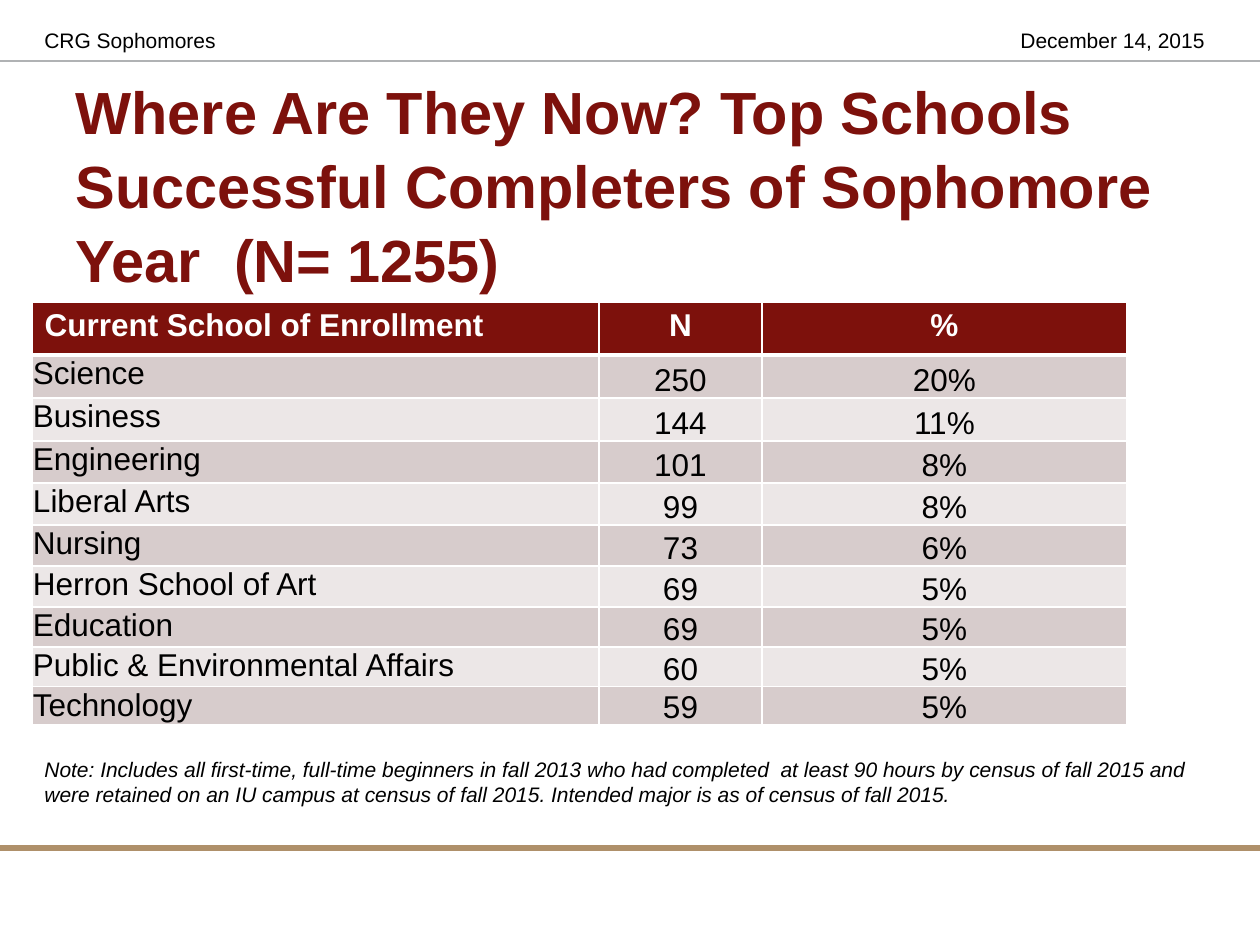
from lxml import etree
from pptx import Presentation
from pptx.dml.color import RGBColor
from pptx.enum.shapes import MSO_CONNECTOR
from pptx.enum.text import MSO_ANCHOR, MSO_AUTO_SIZE, PP_ALIGN
from pptx.oxml.ns import qn
from pptx.util import Emu, Pt

LEFT, CENTER = PP_ALIGN.LEFT, PP_ALIGN.CENTER
TOP, MIDDLE, BOTTOM = MSO_ANCHOR.TOP, MSO_ANCHOR.MIDDLE, MSO_ANCHOR.BOTTOM
STRAIGHT = MSO_CONNECTOR.STRAIGHT
NO_AUTOFIT = MSO_AUTO_SIZE.NONE

CRIMSON = RGBColor(0x7D, 0x11, 0x0C)
TAN = RGBColor(0xAF, 0x90, 0x6A)
GREY = RGBColor(0xB0, 0xB2, 0xB4)
WHITE = RGBColor(0xFF, 0xFF, 0xFF)
BLACK = RGBColor(0, 0, 0)
BANDS = [RGBColor(0xD7, 0xCC, 0xCC), RGBColor(0xEC, 0xE7, 0xE7)]

FONT = "Arial"
SLIDE_WIDTH, SLIDE_HEIGHT = 1260, 945

TITLE = "Where Are They Now? Top Schools Successful Completers of Sophomore Year  (N= 1255)"
TITLE_BOX = (63, 105, 1169, 157)

HEADINGS = ("Current School of Enrollment", "N", "%")
SCHOOLS = [
    ("Science", "250", "20%"),
    ("Business", "144", "11%"),
    ("Engineering", "101", "8%"),
    ("Liberal Arts", "99", "8%"),
    ("Nursing", "73", "6%"),
    ("Herron School of Art", "69", "5%"),
    ("Education", "69", "5%"),
    ("Public & Environmental Affairs", "60", "5%"),
    ("Technology", "59", "5%"),
]
TABLE_LEFT, TABLE_TOP = 32, 302
COLUMN_WIDTHS = [567, 163, 365]
ROW_HEIGHTS = [53, 43, 43, 42, 42, 41, 41, 40, 40, 38]

CAPTIONS = [
    ("December 14, 2015", (1008, 21, 221, 42), False),
    ("CRG Sophomores", (32, 21, 683, 42), False),
    ("Note: Includes all first-time, full-time beginners in fall 2013 who had completed  "
     "at least 90 hours by census of fall 2015 and were retained on an IU campus at census "
     "of fall 2015. Intended major is as of census of fall 2015.",
     (32, 750, 1176, 63), True),
]
RULES = [(61, GREY, 0.75), (848, TAN, 3.75)]


def px(length):
    return Emu(round(length * 914400 / 126))


def style(paragraph, size, color, bold=False, italic=False):
    font = paragraph.font
    font.name, font.size = FONT, Pt(size)
    font.bold, font.italic = bold, italic
    font.color.rgb = color


def add_rule(slide, y, color, weight):
    rule = slide.shapes.add_connector(STRAIGHT, 0, px(y), px(SLIDE_WIDTH), px(y))
    rule.line.color.rgb = color
    rule.line.width = Pt(weight)
    etree.SubElement(rule._element.spPr, qn("a:effectLst"))


def add_title(slide):
    title = slide.shapes.title
    title.left, title.top, title.width, title.height = map(px, TITLE_BOX)
    frame = title.text_frame
    frame.text = TITLE
    frame.auto_size = NO_AUTOFIT
    frame.vertical_anchor = MIDDLE
    heading = frame.paragraphs[0]
    heading.alignment = LEFT
    heading.line_spacing = 1.04
    style(heading, 34, CRIMSON, bold=True)


def add_caption(slide, text, box, italic):
    frame = slide.shapes.add_textbox(*map(px, box)).text_frame
    frame.word_wrap = True
    frame.text = text
    style(frame.paragraphs[0], 12, BLACK, italic=italic)


def set_borders(cell, weights):
    properties = cell._tc.get_or_add_tcPr()
    for side, weight in weights.items():
        border = etree.SubElement(properties, qn(f"a:ln{side}"), w=str(Pt(weight)))
        fill = etree.SubElement(border, qn("a:solidFill"))
        etree.SubElement(fill, qn("a:srgbClr"), val=str(WHITE))


def fill_cell(cell, text, row, column):
    is_heading = row == 0
    set_borders(cell, {"L": 1, "R": 1, "T": 3 if row == 1 else 1, "B": 3 if is_heading else 1})
    cell.fill.solid()
    cell.fill.fore_color.rgb = CRIMSON if is_heading else BANDS[(row - 1) % 2]
    if not is_heading:
        cell.margin_left = cell.margin_right = cell.margin_top = px(1)
        cell.margin_bottom = 0
    cell.vertical_anchor = TOP if is_heading or column == 0 else BOTTOM
    cell.text = text
    paragraph = cell.text_frame.paragraphs[0]
    paragraph.alignment = CENTER if column else LEFT
    style(paragraph, 18, WHITE if is_heading else BLACK, bold=is_heading)


def add_school_table(slide):
    rows = [HEADINGS] + SCHOOLS
    table = slide.shapes.add_table(
        len(rows), len(HEADINGS), px(TABLE_LEFT), px(TABLE_TOP),
        px(sum(COLUMN_WIDTHS)), px(sum(ROW_HEIGHTS))).table
    for column, width in zip(table.columns, COLUMN_WIDTHS):
        column.width = px(width)
    for row, height in zip(table.rows, ROW_HEIGHTS):
        row.height = px(height)
    for r, values in enumerate(rows):
        for c, value in enumerate(values):
            fill_cell(table.cell(r, c), value, r, c)


def main():
    deck = Presentation()
    deck.slide_width, deck.slide_height = px(SLIDE_WIDTH), px(SLIDE_HEIGHT)
    slide = deck.slides.add_slide(deck.slide_layouts[5])
    for rule in RULES:
        add_rule(slide, *rule)
    add_title(slide)
    add_school_table(slide)
    for caption in CAPTIONS:
        add_caption(slide, *caption)
    deck.save("out.pptx")


if __name__ == "__main__":
    main()
